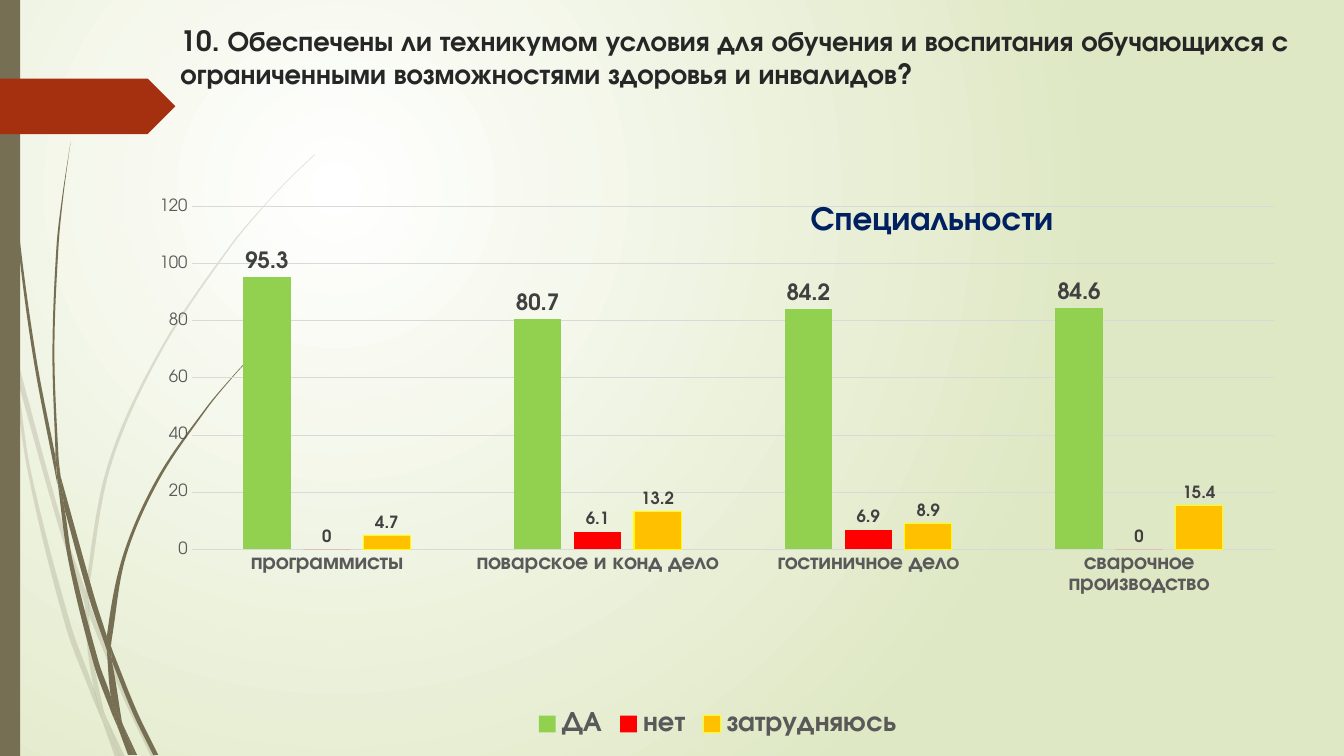
from dataclasses import dataclass
from math import dist

from lxml import etree
from pptx import Presentation
from pptx.chart.data import CategoryChartData
from pptx.dml.color import RGBColor
from pptx.enum import chart as ch, shapes, text
from pptx.oxml.ns import qn
from pptx.util import Inches, Pt

FONT = "TeX Gyre Adventor"
OLIVE, GREY, GRID = "766F54", "595959", "D9D9D9"
CHART_BOX = (1.46, 1.86, 11.32, 5.51)
Points = list[tuple[float, float]]


@dataclass
class Blade:
    """A piece of a grass stem: one edge down, the other back up."""
    down: Points
    up: Points


@dataclass
class Answer:
    name: str
    values: tuple[float, ...]
    color: str
    label_size: int
    outline: str = ""


PALE_GRASS = [
    Blade([(0, 2.82), (0.09, 3.22), (0.11, 3.5)], [(0.1, 3.44), (0, 2.99)]),
    Blade([(0.14, 3.45), (0.62, 5.2), (0.85, 5.86)], [(0.84, 5.99), (0.58, 5.22), (0.17, 3.76)]),
    Blade([(0.88, 5.96), (0.92, 6.07), (1.27, 6.92), (1.55, 7.51)],
          [(1.5, 7.51), (1.23, 6.94), (0.88, 6.1)]),
    Blade([(1.05, 7.11), (1.24, 7.51)], [(1.19, 7.51)]),
    Blade([(0.11, 3.5), (0.17, 3.76), (0.31, 4.69), (0.7, 6.19), (0.93, 6.83), (1.01, 7.14)],
          [(0.92, 6.93), (0.65, 6.21), (0.28, 4.7), (0.11, 3.5)]),
    Blade([(0.84, 5.99), (0.88, 6.1), (0.91, 6.46), (1.03, 7.06), (1.05, 7.11)],
          [(0.96, 6.92), (0.93, 6.83), (0.87, 6.46), (0.84, 5.99)]),
    Blade([(3.12, 1.53), (2.89, 1.75), (2.68, 1.97), (2.28, 2.44), (1.58, 3.48), (1.07, 4.61),
           (0.85, 5.84), (0.88, 5.96)],
          [(0.88, 5.84), (1.1, 4.62), (1.6, 3.49), (2.29, 2.45), (2.68, 1.98), (2.9, 1.75),
           (3.12, 1.54)]),
    Blade([(1.01, 7.14), (1.19, 7.51)], [(1.14, 7.51)]),
    Blade([(0.85, 5.86), (0.88, 5.96), (0.88, 6.1)], [(0.88, 6.08), (0.84, 5.99)]),
    Blade([(0.93, 6.83), (0.96, 6.92), (1.05, 7.11), (1.19, 7.51)], [(1.01, 7.14), (0.99, 7.07)]),
]
DARK_GRASS = [
    Blade([(0.04, 0), (0.05, 0.48), (0.08, 1.09), (0.19, 2.32), (0.36, 3.55), (0.55, 4.53)],
          [(0.57, 4.81), (0.33, 3.55), (0.17, 2.33), (0.07, 1.1), (0.04, 0.48), (0.03, 0)]),
    Blade([(0.6, 4.72), (0.93, 5.9), (1.06, 6.31)],
          [(1.06, 6.45), (0.88, 5.92), (0.64, 5.05)]),
    Blade([(1.1, 6.41), (1.13, 6.49), (1.36, 7.06), (1.57, 7.49)],
          [(1.52, 7.49), (1.32, 7.08), (1.11, 6.56)]),
    Blade([(0.57, 4.77), (0.64, 5.05), (0.72, 5.56), (0.98, 6.57), (1.1, 6.91), (1.17, 7.22)],
          [(1.11, 7.08), (0.93, 6.59), (0.68, 5.57), (0.57, 4.77)]),
    Blade([(0.7, 1.41), (0.63, 1.93), (0.58, 2.45), (0.54, 3.49), (0.58, 4.53), (0.6, 4.72)],
          [(0.55, 4.49), (0.52, 3.49), (0.56, 2.45), (0.62, 1.93), (0.7, 1.41)]),
    Blade([(1.22, 7.19), (1.36, 7.49)], [(1.33, 7.49)]),
    Blade([(0.55, 4.49), (0.6, 4.72), (0.64, 5.05)], [(0.57, 4.77), (0.55, 4.53)]),
    Blade([(2.6, 3.44), (2.45, 3.58), (2.31, 3.73), (2.04, 4.05), (1.56, 4.74), (1.22, 5.51),
           (1.06, 6.31), (1.1, 6.41)],
          [(1.11, 6.33), (1.25, 5.52), (1.58, 4.76), (2.05, 4.06), (2.31, 3.74), (2.45, 3.59),
           (2.61, 3.44)]),
    Blade([(1.17, 7.22), (1.31, 7.49)], [(1.27, 7.49)]),
    Blade([(1.06, 6.45), (1.11, 6.56), (1.21, 7.16), (1.22, 7.19)],
          [(1.16, 7.06), (1.1, 6.91), (1.06, 6.45)]),
    Blade([(1.06, 6.31), (1.1, 6.41), (1.11, 6.56)], [(1.09, 6.51), (1.06, 6.45)]),
    Blade([(1.1, 6.91), (1.16, 7.06), (1.22, 7.19), (1.33, 7.49)], [(1.3, 7.49), (1.17, 7.22)]),
]
SPECIALTIES = ["программисты", "поварское и конд дело", "гостиничное дело", "сварочное производство"]
ANSWERS = [
    Answer("ДА", (95.3, 80.7, 84.2, 84.6), "92D050", 16),
    Answer("нет", (0, 6.1, 6.9, 0), "FF0000", 12),
    Answer("затрудняюсь", (4.7, 13.2, 8.9, 15.4), "FFC000", 12, "FFFF00"),
]


def set_font(font, size: float, color: str, bold: bool = False) -> None:
    font.name, font.size, font.bold = FONT, Pt(size), bold
    font.color.rgb = RGBColor.from_string(color)


def set_line(line, color: str) -> None:
    line.color.rgb = RGBColor.from_string(color)
    line.width = Pt(0.75)


def set_fill(fill, color: str) -> None:
    fill.solid()
    fill.fore_color.rgb = RGBColor.from_string(color)


def paint(sp, color: str) -> None:
    sp.shadow.inherit = False
    sp.line.fill.background()
    set_fill(sp.fill, color)


def bezier_arcs(knots: Points) -> list[Points]:
    """Two handles and an end for each arc of a smooth curve through the knots."""
    slopes = []
    for i in range(len(knots)):
        near = knots[max(i - 1, 0):i + 2]
        length = sum(map(dist, near, near[1:])) or 1
        slopes.append([(b - a) / length for a, b in zip(near[0], near[-1])])
    return [[tuple(x + dist(a, b) / 3 * k for x, k in zip(a, m)),
             tuple(x - dist(a, b) / 3 * k for x, k in zip(b, n)), b]
            for a, b, m, n in zip(knots, knots[1:], slopes, slopes[1:])]


def add_blade(s, blade: Blade, opacity: int) -> None:
    start, *rest = [(Inches(x), Inches(y)) for x, y in blade.down + blade.up]
    builder = s.shapes.build_freeform(*start)
    builder.add_line_segments(rest, close=True)
    sp = builder.convert_to_shape()
    paint(sp, OLIVE)
    if opacity < 100:
        clr = sp._element.spPr.find(".//" + qn("a:srgbClr"))
        etree.SubElement(clr, qn("a:alpha"), val=str(opacity * 1000))
    # Bend both edges, leaving the step between them straight
    segments = sp._element.findall(".//" + qn("a:lnTo"))
    arcs = bezier_arcs(blade.down) + [None] + bezier_arcs(blade.up)
    for segment, arc in zip(segments, arcs):
        if arc:
            curve = etree.Element(qn("a:cubicBezTo"))
            for x, y in arc:
                etree.SubElement(curve, qn("a:pt"), x=str(Inches(x) - sp.left),
                                 y=str(Inches(y) - sp.top))
            segment.getparent().replace(segment, curve)


def set_layout(parent, **inches: float) -> None:
    """Place a chart part by hand, in inches from the chart's corner."""
    layout = parent.find(qn("c:layout"))
    if layout is None:
        layout = etree.Element(qn("c:layout"))
        parent.insert(0, layout)
    manual = etree.SubElement(layout, qn("c:manualLayout"))
    if "w" in inches:
        etree.SubElement(manual, qn("c:layoutTarget"), val="inner")
    for mode in ("xMode", "yMode"):
        etree.SubElement(manual, qn(f"c:{mode}"), val="edge")
    for name, value in inches.items():
        share = value / CHART_BOX[2 if name in "xw" else 3]
        etree.SubElement(manual, qn(f"c:{name}"), val=str(share))


def set_background(s) -> None:
    fill = s.background.fill
    fill.gradient()
    for stop, color in zip(fill.gradient_stops, ("FFFFFF", "DFE8C4")):
        stop.color.rgb = RGBColor.from_string(color)
    lin = s._element.find(".//" + qn("a:lin"))
    circle = etree.Element(qn("a:path"), path="circle")
    etree.SubElement(circle, qn("a:fillToRect"), l="50000", t="50000", r="100000", b="100000")
    lin.getparent().replace(lin, circle)


def add_title(s) -> None:
    sp = s.shapes.title
    sp.left, sp.top, sp.width, sp.height = map(Inches, (1.69, 0.18, 11.53, 1.4))
    tf = sp.text_frame
    tf.word_wrap, tf.auto_size = True, text.MSO_AUTO_SIZE.NONE
    tf.vertical_anchor = text.MSO_ANCHOR.TOP
    p = tf.paragraphs[0]
    p.text = ("10. Обеспечены ли техникумом условия для обучения и воспитания обучающихся "
              "с ограниченными возможностями здоровья и инвалидов?")
    p.alignment = text.PP_ALIGN.LEFT
    set_font(p.font, 20, "262626", True)


def add_answers_chart(s) -> None:
    data = CategoryChartData()
    data.categories = SPECIALTIES
    for answer in ANSWERS:
        data.add_series(answer.name, answer.values)
    kind = ch.XL_CHART_TYPE.COLUMN_CLUSTERED
    chart = s.shapes.add_chart(kind, *map(Inches, CHART_BOX), data).chart
    set_font(chart.font, 10, "000000")
    # Title, plot area and legend
    p = chart.chart_title.text_frame.paragraphs[0]
    p.text = "Специальности"
    set_font(p.font, 24, "002060", True)
    set_layout(chart.chart_title._element, x=6.52, y=0.08)
    set_layout(chart._chartSpace.chart.plotArea, x=0.44, y=0.19, w=10.74, h=3.4)
    chart.has_legend = True
    chart.legend.position = ch.XL_LEGEND_POSITION.BOTTOM
    chart.legend.include_in_layout = False
    set_font(chart.legend.font, 20, GREY, True)
    # Axes
    cat, val = chart.category_axis, chart.value_axis
    for axis, size, bold in ((cat, 16, True), (val, 12, False)):
        axis.major_tick_mark = axis.minor_tick_mark = ch.XL_TICK_MARK.NONE
        set_font(axis.tick_labels.font, size, GREY, bold)
    set_line(cat.format.line, GRID)
    val.format.line.fill.background()
    set_line(val.major_gridlines.format.line, GRID)
    # Columns
    plot = chart.plots[0]
    plot.vary_by_categories = False
    plot.gap_width, plot.overlap = 219, -27
    for series, answer in zip(plot.series, ANSWERS):
        set_fill(series.format.fill, answer.color)
        if answer.outline:
            set_line(series.format.line, answer.outline)
        labels = series.data_labels
        labels.show_value = True
        labels.position = ch.XL_LABEL_POSITION.OUTSIDE_END
        set_font(labels.font, answer.label_size, "404040", True)


def main() -> None:
    prs = Presentation()
    prs.slide_width, prs.slide_height = Inches(13.33), Inches(7.5)
    s = prs.slides.add_slide(prs.slide_layouts[5])
    set_background(s)
    add_title(s)
    # Decoration on the left
    for grass, opacity in ((PALE_GRASS, 20), (DARK_GRASS, 100)):
        for blade in grass:
            add_blade(s, blade, opacity)
    for preset, color, box in ((shapes.MSO_SHAPE.RECTANGLE, OLIVE, (0, 0, 0.2, 7.5)),
                               (shapes.MSO_SHAPE.PENTAGON, "A53010", (0, 0.78, 1.74, 0.55))):
        paint(s.shapes.add_shape(preset, *map(Inches, box)), color)
    add_answers_chart(s)
    prs.save("out.pptx")


if __name__ == "__main__":
    main()
